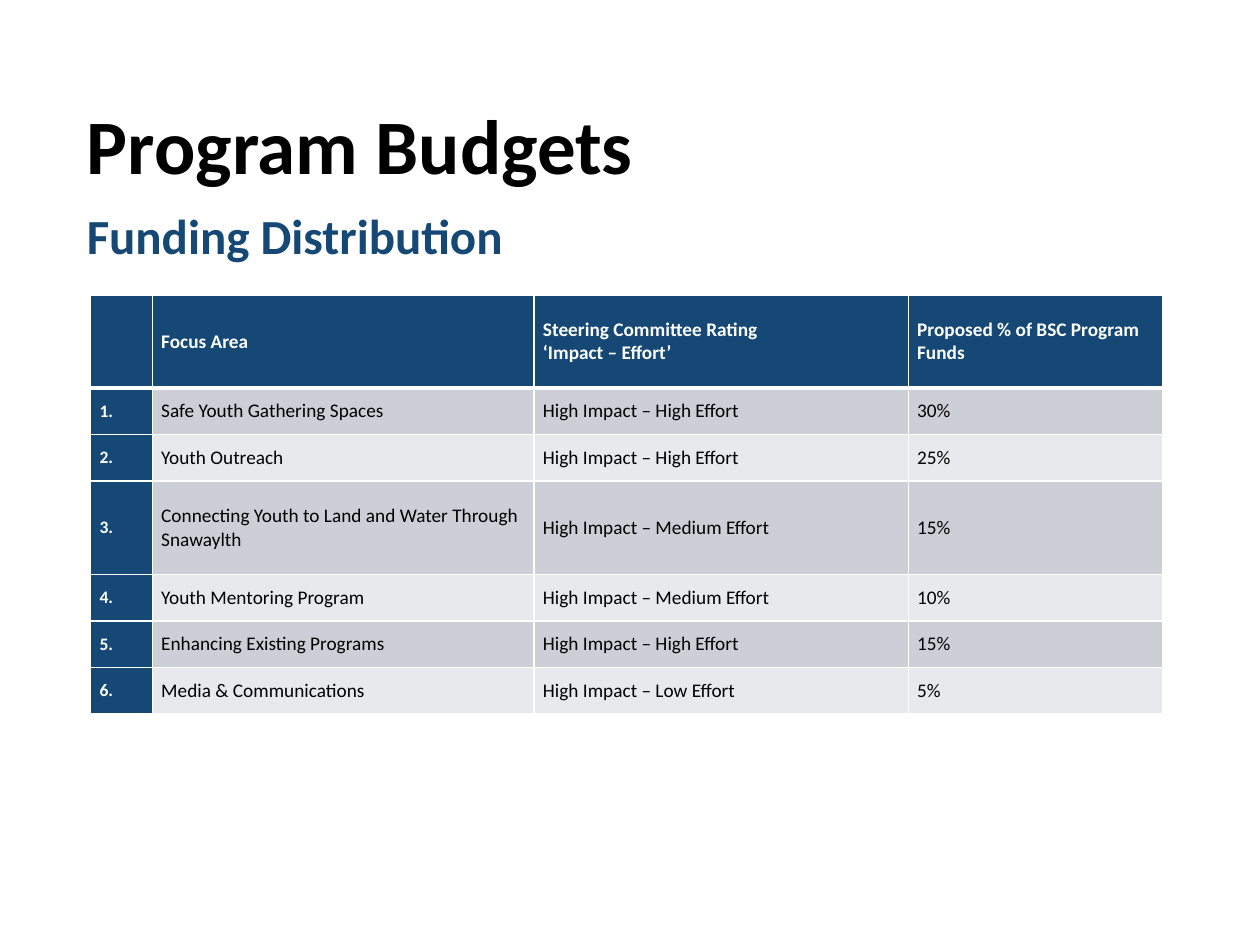
from lxml import etree
from pptx import Presentation
from pptx.dml.color import RGBColor
from pptx.enum.text import MSO_ANCHOR
from pptx.oxml.ns import qn
from pptx.util import Inches, Pt

MIDDLE, TOP = MSO_ANCHOR.MIDDLE, MSO_ANCHOR.TOP
FONT = "Calibri"
NAVY = RGBColor(0x15, 0x48, 0x75)
BLACK = RGBColor(0, 0, 0)
WHITE = RGBColor(0xFF, 0xFF, 0xFF)
BANDS = (RGBColor(0xCC, 0xCF, 0xD6), RGBColor(0xE8, 0xE9, 0xEC))

# Content
HEADINGS = [
    # text, (left, top, width, height), anchor, line spacing, size, colour
    ("Program Budgets", (0.59, 0.56, 8.21, 1.26), MIDDLE, 0.9, 44, BLACK),
    ("Funding Distribution", (0.59, 1.67, 8.62, 0.5), TOP, 0.8, 28, NAVY),
]
HEADER = ["", "Focus Area", "Steering Committee Rating\n‘Impact – Effort’",
          "Proposed % of BSC Program Funds"]
FOCUS_AREAS = [
    ("Safe Youth Gathering Spaces", "High Impact – High Effort", "30%"),
    ("Youth Outreach", "High Impact – High Effort", "25%"),
    ("Connecting Youth to Land and Water Through Snawaylth",
     "High Impact – Medium Effort", "15%"),
    ("Youth Mentoring Program", "High Impact – Medium Effort", "10%"),
    ("Enhancing Existing Programs", "High Impact – High Effort", "15%"),
    ("Media & Communications", "High Impact – Low Effort", "5%"),
]
COLUMN_WIDTHS = [0.49, 3.03, 2.97, 2.02]
ROW_HEIGHT = 0.37
TALL_ROWS = (0, 3)  # rows with two lines of text


def set_font(paragraph, size, color, bold):
    values = {"name": FONT, "size": Pt(size), "bold": bold}
    for name, value in values.items():
        setattr(paragraph.font, name, value)
    paragraph.font.color.rgb = color


def add_border(cell, side, width):
    properties = cell._tc.get_or_add_tcPr()
    line = etree.SubElement(properties, qn(f"a:ln{side}"), w=str(Pt(width)))
    fill = etree.SubElement(line, qn("a:solidFill"))
    etree.SubElement(fill, qn("a:srgbClr"), val=str(WHITE))


def format_cell(cell, text, row, column):
    # Borders come before the fill in the cell properties
    for side in "LRTB":
        below_header = (row, side) in ((0, "B"), (1, "T"))
        add_border(cell, side, 3 if below_header else 1)
    is_heading = row == 0 or column == 0
    cell.fill.solid()
    cell.fill.fore_color.rgb = NAVY if is_heading else BANDS[(row - 1) % 2]
    cell.vertical_anchor = MIDDLE
    cell.margin_left = cell.margin_right = Inches(0.07)
    cell.margin_top = cell.margin_bottom = 0
    cell.text = text
    size = 10 if column == 0 else 11
    for paragraph in cell.text_frame.paragraphs:
        set_font(paragraph, size, WHITE if is_heading else BLACK, is_heading)


presentation = Presentation()
presentation.slide_width, presentation.slide_height = Inches(10), Inches(7.5)
slide = presentation.slides.add_slide(presentation.slide_layouts[6])

# Title and subtitle
for text, box, anchor, spacing, size, color in HEADINGS:
    frame = slide.shapes.add_textbox(*map(Inches, box)).text_frame
    frame.word_wrap = True
    frame.vertical_anchor = anchor
    paragraph = frame.paragraphs[0]
    paragraph.text = text
    paragraph.line_spacing = spacing
    set_font(paragraph, size, color, True)

# Funding table
rows = [HEADER] + [(f"{number}.", *area)
                   for number, area in enumerate(FOCUS_AREAS, 1)]
heights = [ROW_HEIGHT * (2 if row in TALL_ROWS else 1)
           for row in range(len(rows))]
table = slide.shapes.add_table(
    len(rows), len(HEADER), Inches(0.72), Inches(2.34),
    Inches(sum(COLUMN_WIDTHS)), Inches(sum(heights))).table
for column, width in zip(table.columns, COLUMN_WIDTHS):
    column.width = Inches(width)
for row, height in zip(table.rows, heights):
    row.height = Inches(height)
for row, texts in enumerate(rows):
    for column, text in enumerate(texts):
        format_cell(table.cell(row, column), text, row, column)

presentation.save("out.pptx")
